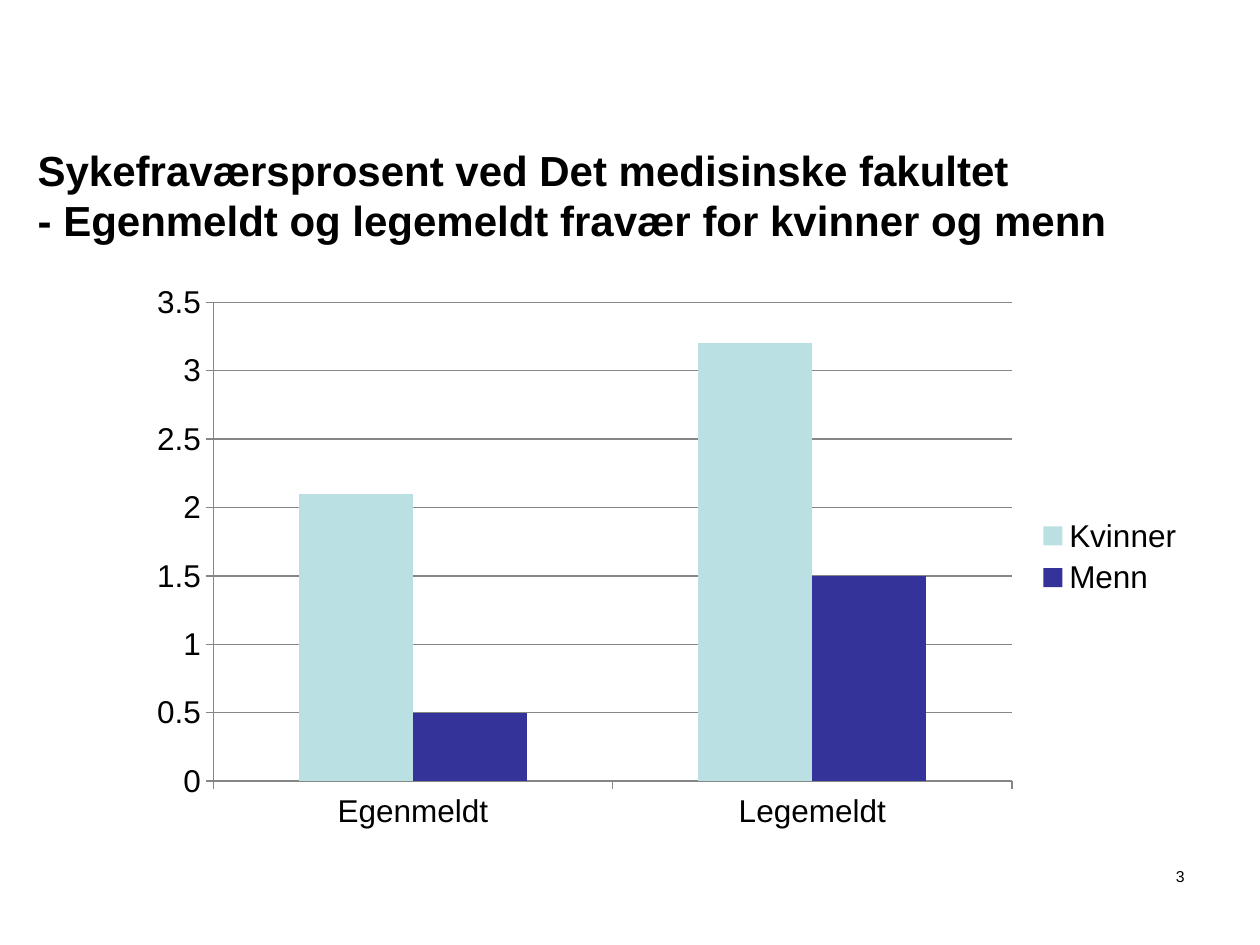
from pptx import Presentation
from pptx.chart.data import CategoryChartData
from pptx.dml.color import RGBColor
from pptx.enum.chart import XL_CHART_TYPE, XL_LEGEND_POSITION, XL_TICK_MARK
from pptx.enum.text import MSO_ANCHOR, PP_ALIGN
from pptx.util import Cm, Pt


def color(hex_code):
    return RGBColor.from_string(hex_code)


def set_font(font, size, bold=False):
    font.name = "Arial"
    font.size = Pt(size)
    font.bold = bold
    font.color.rgb = color("000000")


def write(frame, text, size, bold=False, align=PP_ALIGN.LEFT, anchor=MSO_ANCHOR.TOP):
    """Fill a text frame with one paragraph; a vertical tab breaks the line."""
    frame.word_wrap = True
    frame.vertical_anchor = anchor
    paragraph = frame.paragraphs[0]
    paragraph.text = text
    paragraph.alignment = align
    for run in paragraph.runs:
        set_font(run.font, size, bold)


class SlideBuilder:
    axis_color = "868686"
    chart_text_size = 18

    def __init__(self, slide):
        self.slide = slide

    def text(self, left, top, width, height, text, **text_format):
        box = self.slide.shapes.add_textbox(Cm(left), Cm(top), Cm(width), Cm(height))
        write(box.text_frame, text, **text_format)

    def style_axis(self, axis):
        axis.major_tick_mark = XL_TICK_MARK.OUTSIDE
        axis.minor_tick_mark = XL_TICK_MARK.NONE
        axis.format.line.color.rgb = color(self.axis_color)
        axis.format.line.width = Pt(0.75)

    def column_chart(self, left, top, width, height, categories, series):
        """Add clustered columns; series maps a name to its values and fill."""
        data = CategoryChartData()
        data.categories = categories
        for name, (values, _) in series.items():
            data.add_series(name, values)
        chart = self.slide.shapes.add_chart(
            XL_CHART_TYPE.COLUMN_CLUSTERED,
            Cm(left), Cm(top), Cm(width), Cm(height), data,
        ).chart
        set_font(chart.font, self.chart_text_size)
        chart.has_title = False
        chart.has_legend = True
        chart.legend.position = XL_LEGEND_POSITION.RIGHT
        chart.legend.include_in_layout = False

        self.style_axis(chart.category_axis)
        self.style_axis(chart.value_axis)
        chart.value_axis.minimum_scale = 0
        chart.value_axis.maximum_scale = 3.5
        chart.value_axis.major_unit = 0.5
        chart.value_axis.has_major_gridlines = True
        gridline = chart.value_axis.major_gridlines.format.line
        gridline.color.rgb = color(self.axis_color)
        gridline.width = Pt(0.75)

        plot = chart.plots[0]
        plot.gap_width = 150
        plot.overlap = 0
        plot.vary_by_categories = False
        for columns, (_, fill) in zip(plot.series, series.values()):
            columns.format.fill.solid()
            columns.format.fill.fore_color.rgb = color(fill)


def main():
    presentation = Presentation()
    presentation.slide_width = Cm(25.4)
    presentation.slide_height = Cm(19.05)
    blank_layout = presentation.slide_layouts[6]
    builder = SlideBuilder(presentation.slides.add_slide(blank_layout))

    builder.text(
        0.51, 2.34, 24.89, 3.18,
        "Sykefraværsprosent ved Det medisinske fakultet\v"
        "- Egenmeldt og legemeldt fravær for kvinner og menn",
        size=24, bold=True, anchor=MSO_ANCHOR.MIDDLE,
    )
    builder.text(22.23, 17.35, 1.9, 1.27, "3", size=9, align=PP_ALIGN.RIGHT)
    builder.column_chart(
        2.74, 5.51, 21.39, 11.43,
        categories=["Egenmeldt", "Legemeldt"],
        series={
            "Kvinner": ([2.1, 3.2], "BBE0E3"),
            "Menn": ([0.5, 1.5], "333399"),
        },
    )
    presentation.save("out.pptx")


if __name__ == "__main__":
    main()
